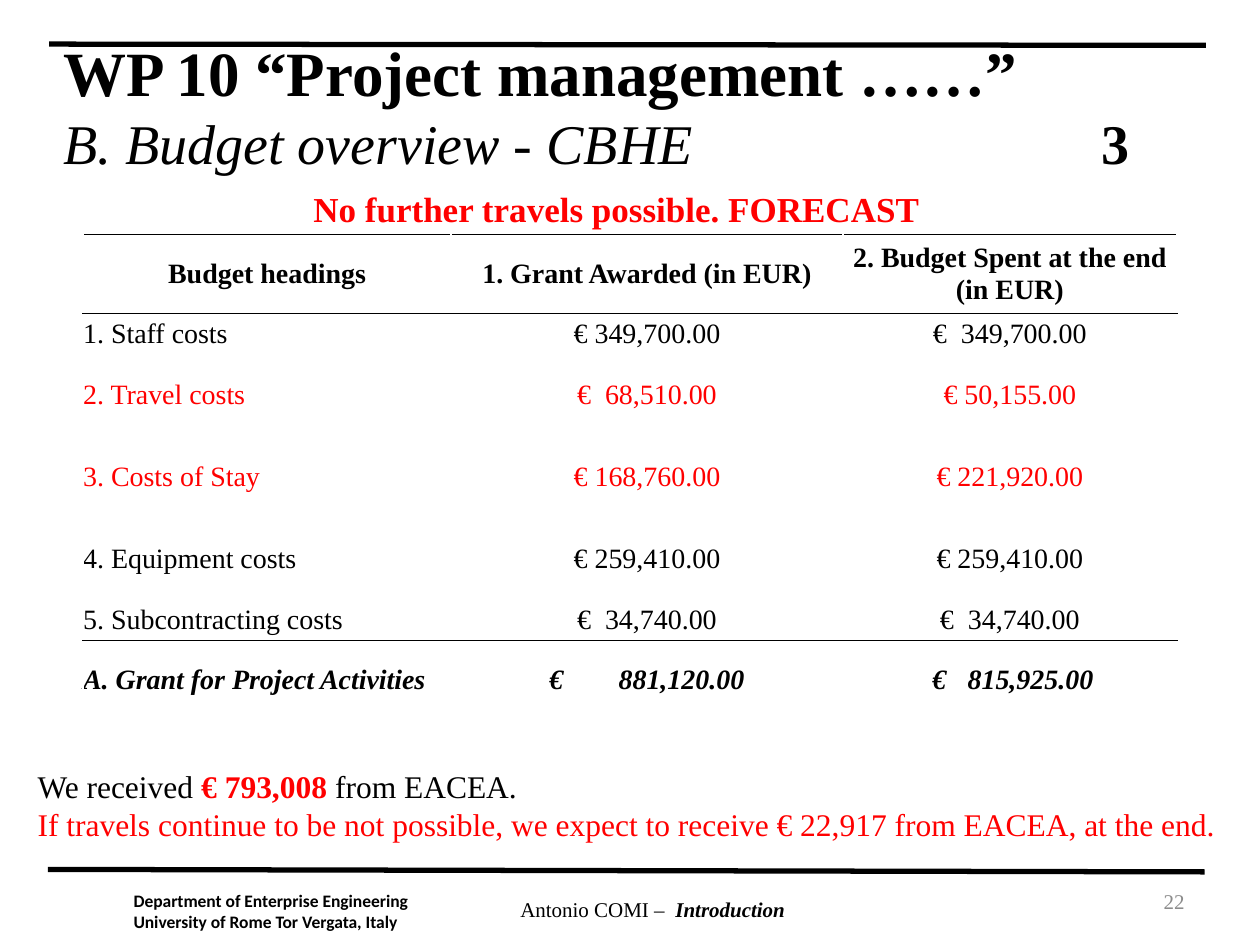
"""Build the budget overview slide for the project management work package."""
from lxml.etree import SubElement
from pptx import Presentation
from pptx.dml.color import RGBColor
from pptx.enum.shapes import MSO_CONNECTOR, MSO_SHAPE
from pptx.enum.text import MSO_ANCHOR, MSO_AUTO_SIZE, PP_ALIGN
from pptx.oxml import parse_xml
from pptx.oxml.ns import nsdecls, qn
from pptx.util import Inches, Pt

COLORS = {"ink": "000000", "alert": "FF0000", "paper": "FFFFFF", "muted": "8C8C8C"}
SERIF = "Times New Roman"
UNIT = Inches(0.1)


def grid(*steps):
    return [int(step * UNIT) for step in steps]


def write(para, text, size, color="ink", name=SERIF, **styles):
    span = para.add_run()
    span.text = text
    for attribute, value in {"size": Pt(size), "name": name, **styles}.items():
        setattr(span.font, attribute, value)
    span.font.color.rgb = RGBColor.from_string(COLORS[color])


deck = Presentation()
deck.slide_width, deck.slide_height = grid(100, 75)
page = deck.slides.add_slide(deck.slide_layouts[5])

for ends in [(3.8, 69, 95.6, 69.2), (3.9, 3.5, 95.7, 3.6)]:
    rule = page.shapes.add_connector(MSO_CONNECTOR.STRAIGHT, *grid(*ends))
    rule.line.width = Pt(3)
    rule.line.color.rgb = RGBColor.from_string(COLORS["ink"])
    SubElement(rule._element.spPr, qn("a:effectLst"))

title = page.shapes.title
for attribute, value in zip(("left", "top", "width", "height"), grid(4, 4.3, 91.6, 8)):
    setattr(title, attribute, value)
frame = title.text_frame
frame.auto_size = MSO_AUTO_SIZE.NONE
frame.vertical_anchor = MSO_ANCHOR.MIDDLE
heading = frame.paragraphs[0]
heading.alignment = PP_ALIGN.LEFT
stops = SubElement(heading._p.get_or_add_pPr(), qn("a:tabLst"))
SubElement(stops, qn("a:tab"), pos=str(grid(82.4)[0]), algn="l")
write(heading, "WP 10 “Project management ……”", 36, bold=True)
heading.add_line_break()
write(heading, "B. Budget overview - CBHE\t", 32, bold=False, italic=True)
write(heading, "3", 32, bold=True, italic=False)

strong = {"bold": True}
texts = [
    ((10.6, 70.6, 25.8, 3.3), 0, PP_ALIGN.LEFT, MSO_ANCHOR.TOP, [
        [("Department of Enterprise Engineering", 10, "ink", "Calibri", strong)],
        [("University of Rome Tor Vergata, Italy", 10, "ink", "Calibri", strong)]]),
    ((31.9, 70.7, 39.8, 5), 1, PP_ALIGN.CENTER, MSO_ANCHOR.TOP, [
        [("Antonio COMI –  ", 12, "ink", SERIF, {}),
         ("Introduction", 12, "ink", SERIF, {"bold": True, "italic": True})]]),
    ((71.7, 69.5, 23.3, 4), 1, PP_ALIGN.RIGHT, MSO_ANCHOR.MIDDLE, [
        [("22", 12, "muted", SERIF, {})]]),
    ((2, 60.4, 96.1, 7.1), 1, PP_ALIGN.LEFT, MSO_ANCHOR.TOP, [
        [("We received ", 18, "ink", SERIF, {}),
         ("€ 793,008 ", 18, "alert", SERIF, strong),
         ("from EACEA.", 18, "ink", SERIF, {})],
        [("If travels continue to be not possible, we expect to receive "
          "€ 22,917 from EACEA, at the end.", 18, "alert", SERIF, {})]]),
    ((1.2, 14.4, 96.1, 4.4), 1, PP_ALIGN.CENTER, MSO_ANCHOR.TOP, [
        [("No further travels possible. FORECAST ", 20, "alert", SERIF, strong)]]),
]
for place, inset, alignment, anchor, lines in texts:
    if lines[0][0][0].startswith("We received"):
        box = page.shapes.add_shape(MSO_SHAPE.RECTANGLE, *grid(*place))
        box.shadow.inherit = False
        box.fill.solid()
        box.fill.fore_color.rgb = RGBColor.from_string(COLORS["paper"])
        box.line.fill.background()
    else:
        box = page.shapes.add_textbox(*grid(*place))
    frame = box.text_frame
    settings = {"word_wrap": True, "vertical_anchor": anchor}
    if not inset:
        settings.update(margin_left=0, margin_right=0, margin_top=0, margin_bottom=0)
    for attribute, value in settings.items():
        setattr(frame, attribute, value)
    for index, line in enumerate(lines):
        para = frame.add_paragraph() if index else frame.paragraphs[0]
        para.alignment = alignment
        for text, size, color, name, styles in line:
            write(para, text, size, color, name, **styles)

budget = [
    ("Budget headings", "1. Grant Awarded (in EUR)", "2. Budget Spent at the end (in EUR)"),
    ("1. Staff costs", "€ 349,700.00", "€  349,700.00"),
    ("2. Travel costs", "€  68,510.00", "€ 50,155.00"),
    ("3. Costs of Stay", "€ 168,760.00", "€ 221,920.00"),
    ("4. Equipment costs", "€ 259,410.00", "€ 259,410.00"),
    ("5. Subcontracting costs", "€  34,740.00", "€  34,740.00"),
    ("A. Grant for Project Activities", "\t€\t881,120.00", "\t€\t815,925.00"),
]
total_row = len(budget) - 1
total_stops = {1: (7.8, 13.3), 2: (7.1, 9.9)}
borders = {0: ("lnT", "lnB"), 1: ("lnT",), total_row - 1: ("lnB",), total_row: ("lnT",)}
table = page.shapes.add_table(len(budget), 3, *grid(6.6, 18.6, 86.8, 38.5)).table
table.first_row = table.horz_banding = False
for column, width in zip(table.columns, grid(29.2, 31.1, 26.5)):
    column.width = width
for row, height in zip(table.rows, grid(6.3, 3.2, 6.5, 6.5, 6.5, 3.2, 6.3)):
    row.height = height
for row, values in enumerate(budget):
    for column, value in enumerate(values):
        cell = table.cell(row, column)
        for side in ("left", "right", "top", "bottom"):
            setattr(cell, f"margin_{side}", 0)
        cell.vertical_anchor = MSO_ANCHOR.MIDDLE
        cell.fill.background()
        for position, edge in enumerate(borders.get(row, ())):
            cell._tc.get_or_add_tcPr().insert(position, parse_xml(
                f'<a:{edge} {nsdecls("a")} w="{Pt(0.5)}"><a:solidFill>'
                f'<a:srgbClr val="{COLORS["ink"]}"/></a:solidFill></a:{edge}>'))
        para = cell.text_frame.paragraphs[0]
        centred = row == 0 or (column > 0 and row < total_row)
        para.alignment = PP_ALIGN.CENTER if centred else PP_ALIGN.LEFT
        if row == total_row and column:
            stops = SubElement(para._p.get_or_add_pPr(), qn("a:tabLst"))
            for stop in grid(*total_stops[column]):
                SubElement(stops, qn("a:tab"), pos=str(stop), algn="l")
        write(para, value, 16, "alert" if row in (2, 3) else "ink",
              bold=row in (0, total_row), italic=row == total_row)

deck.save("out.pptx")
